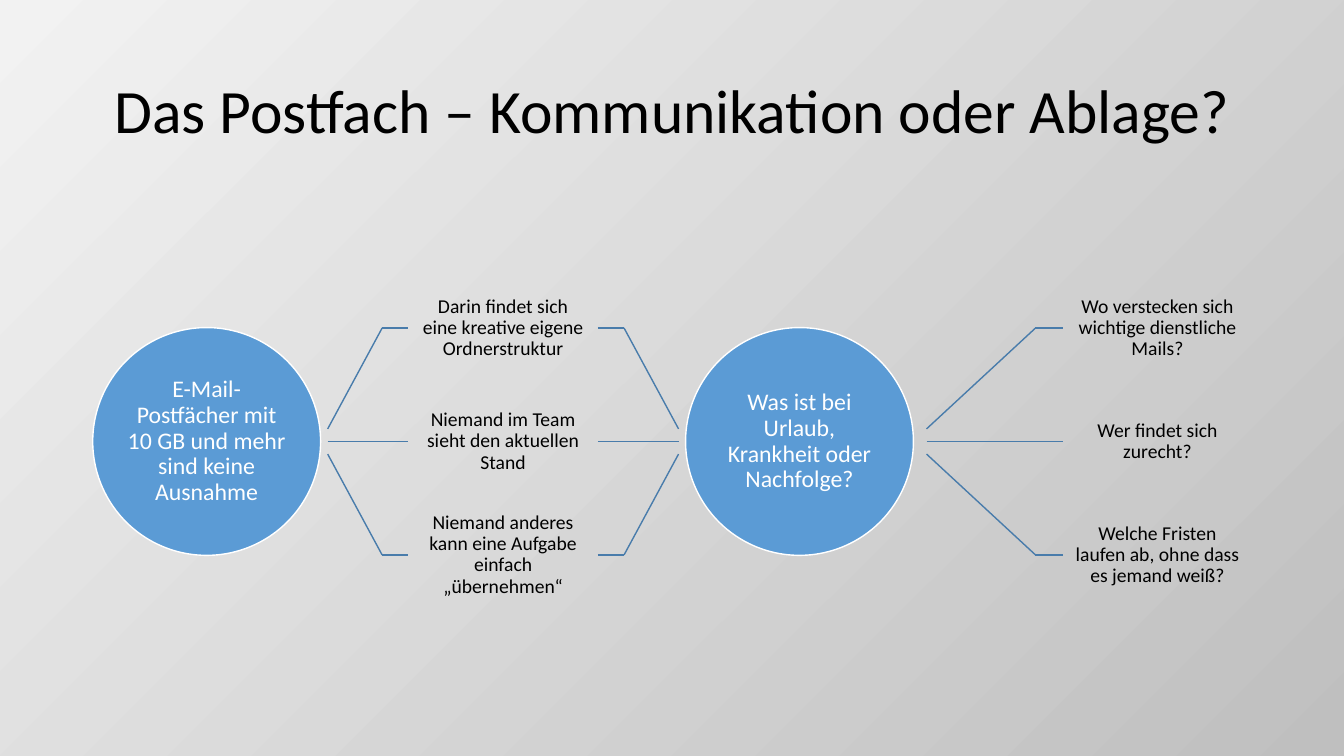
from lxml import etree
from pptx import Presentation
from pptx.dml.color import RGBColor
from pptx.enum.shapes import MSO_CONNECTOR, MSO_SHAPE
from pptx.enum.text import MSO_ANCHOR, MSO_AUTO_SIZE, PP_ALIGN
from pptx.oxml.ns import qn
from pptx.util import Inches, Pt

STRAIGHT = MSO_CONNECTOR.STRAIGHT
OVAL = MSO_SHAPE.OVAL
MIDDLE = MSO_ANCHOR.MIDDLE
CENTER = PP_ALIGN.CENTER
NO_AUTOFIT = MSO_AUTO_SIZE.NONE
LEFT_SIDE, RIGHT_SIDE = 1, 3
color = RGBColor.from_string


def write_text(shape, text, size, text_color, inset_x, inset_y):
    frame = shape.text_frame
    frame.text = text
    frame_format = {
        "word_wrap": True, "auto_size": NO_AUTOFIT, "vertical_anchor": MIDDLE,
        "margin_left": Inches(inset_x), "margin_right": Inches(inset_x),
        "margin_top": Inches(inset_y), "margin_bottom": Inches(inset_y),
    }
    for name, value in frame_format.items():
        setattr(frame, name, value)
    paragraph = frame.paragraphs[0]
    paragraph.alignment = CENTER
    paragraph.line_spacing = 0.9
    paragraph.font.name = "Calibri"
    paragraph.font.size = Pt(size)
    paragraph.font.color.rgb = color(text_color)


def draw_line(x1, y1, x2, y2):
    connector = slide.shapes.add_connector(
        STRAIGHT, Inches(x1), Inches(y1), Inches(x2), Inches(y2))
    connector.line.color.rgb = color("497CAB")
    connector.line.width = Pt(1)
    etree.SubElement(connector._element.spPr, qn("a:effectLst"))
    return connector


presentation = Presentation()
presentation.slide_width = Inches(13.33)
presentation.slide_height = Inches(7.5)
slide = presentation.slides.add_slide(presentation.slide_layouts[5])

# Background gradient from top left to bottom right
background = slide.background.fill
background.gradient()
background.gradient_angle = 315
for stop, stop_color in zip(background.gradient_stops, ("F2F2F2", "BFBFBF")):
    stop.color.rgb = color(stop_color)

# Title
title = slide.shapes.title
title.left, title.top = Inches(0.92), Inches(0.4)
title.width, title.height = Inches(11.5), Inches(1.45)
write_text(title, "Das Postfach – Kommunikation oder Ablage?", 44, "000000", 0.1, 0.05)

# Each topic: circle left, start and bend of the branches, answer box left, text, answers
topics = [
    (0.92, 3.25, 3.79, 4.05, "E-Mail-Postfächer mit 10 GB und mehr sind keine Ausnahme",
     ["Darin findet sich eine kreative eigene Ordnerstruktur",
      "Niemand im Team sieht den aktuellen Stand",
      "Niemand anderes kann eine Aufgabe einfach „übernehmen“"]),
    (6.8, 9.19, 10.27, 10.54, "Was ist bei Urlaub, Krankheit oder Nachfolge?",
     ["Wo verstecken sich wichtige dienstliche Mails?",
      "Wer findet sich zurecht?",
      "Welche Fristen laufen ab, ohne dass es jemand weiß?"]),
]
DIAMETER = 2.26
BOX_WIDTH, BOX_HEIGHT = 1.88, 1.12
MIDDLE_Y, ROW_STEP, FAN_STEP = 4.38, 1.125, 0.125
MERGE_BEND_X, MERGE_END_X = 6.19, 6.73

for index, (circle_left, start_x, bend_x, box_left, question, answers) in enumerate(topics):
    # Circle with the topic
    circle = slide.shapes.add_shape(
        OVAL, Inches(circle_left), Inches(MIDDLE_Y - DIAMETER / 2),
        Inches(DIAMETER), Inches(DIAMETER))
    circle.shadow.inherit = False
    circle.fill.solid()
    circle.fill.fore_color.rgb = color("5B9BD5")
    circle.line.color.rgb = color("FFFFFF")
    circle.line.width = Pt(1)
    write_text(circle, question, 17, "FFFFFF", 0, 0)

    # Answers with their branches
    for row, answer in enumerate(answers, start=-1):
        row_y = MIDDLE_Y + row * ROW_STEP
        fan_y = MIDDLE_Y + row * FAN_STEP
        box = slide.shapes.add_textbox(
            Inches(box_left), Inches(row_y - BOX_HEIGHT / 2),
            Inches(BOX_WIDTH), Inches(BOX_HEIGHT))
        write_text(box, answer, 14, "000000", 0.11, 0.11)
        draw_line(start_x, fan_y, bend_x, row_y)
        draw_line(bend_x, row_y, box_left, row_y).end_connect(box, LEFT_SIDE)
        # The first topic's answers lead on to the second circle
        if index == 0:
            box_right = box_left + BOX_WIDTH
            draw_line(box_right, row_y, MERGE_BEND_X, row_y).begin_connect(box, RIGHT_SIDE)
            draw_line(MERGE_BEND_X, row_y, MERGE_END_X, fan_y)

presentation.save("out.pptx")
